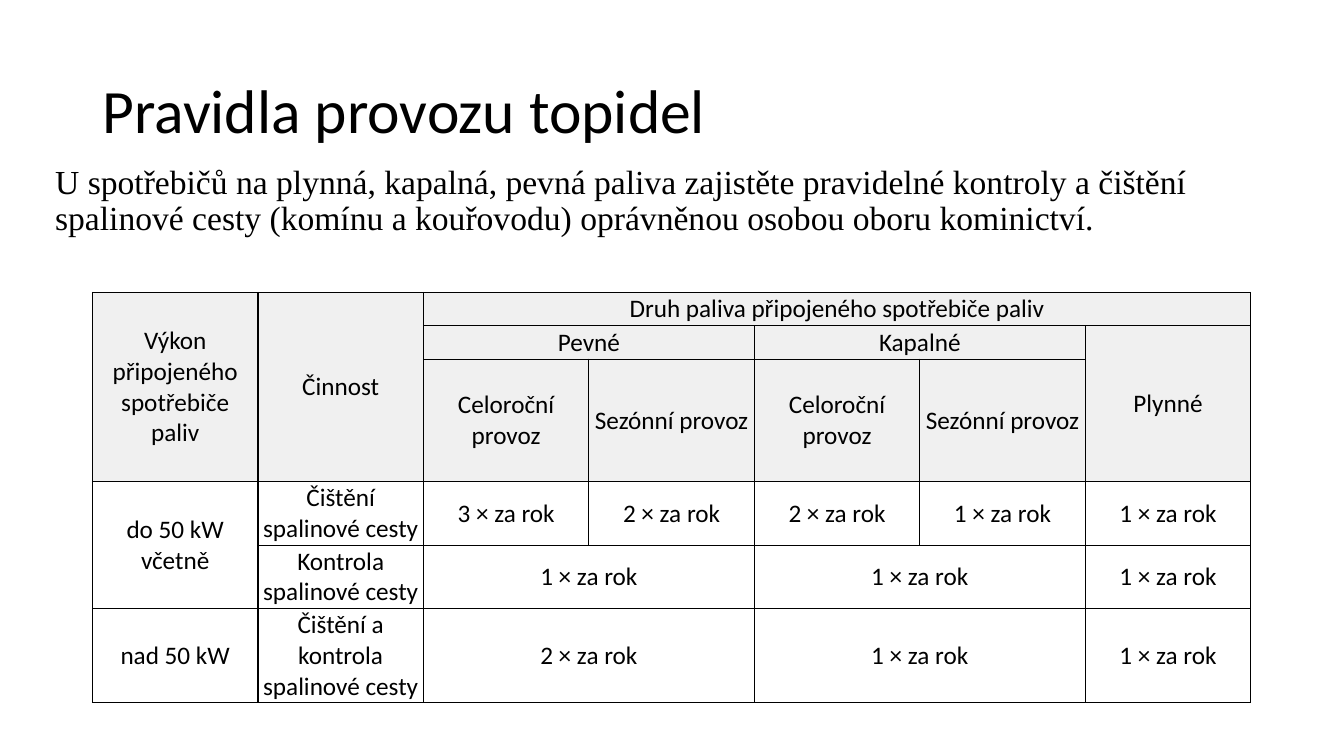
from lxml import etree
from pptx import Presentation
from pptx.dml.color import RGBColor
from pptx.enum import text
from pptx.oxml import ns
from pptx.util import Cm, Pt

TITLE = "Pravidla provozu topidel"
INTRO = ("U spotřebičů na plynná, kapalná, pevná paliva zajistěte pravidelné kontroly a čištění "
         "spalinové cesty (komínu a kouřovodu) oprávněnou osobou oboru kominictví.")
LEFT, UP = "<", "^"
ROWS = [
    ("Výkon připojeného spotřebiče paliv", "Činnost",
     "Druh paliva připojeného spotřebiče paliv", LEFT, LEFT, LEFT, LEFT),
    (UP, UP, "Pevné", LEFT, "Kapalné", LEFT, "Plynné"),
    (UP, UP, "Celoroční provoz", "Sezónní provoz", "Celoroční provoz", "Sezónní provoz", UP),
    ("do 50 kW včetně", "Čištění spalinové cesty",
     "3 × za rok", "2 × za rok", "2 × za rok", "1 × za rok", "1 × za rok"),
    (UP, "Kontrola spalinové cesty", "1 × za rok", LEFT, "1 × za rok", LEFT, "1 × za rok"),
    ("nad 50 kW", "Čištění a kontrola spalinové cesty",
     "2 × za rok", LEFT, "1 × za rok", LEFT, "1 × za rok"),
]
ROW_HEIGHTS = [0.84, 0.84, 1.6, 1.6, 1.6, 2.36]
COLUMN_WIDTH = 4.17
HEADER_ROWS = 3
BLACK, WHITE, GREY = "000000", "FFFFFF", "F0F0F0"
TITLE_FONT = {"name": "Calibri", "size": Pt(44)}
INTRO_FONT = {"name": "Times New Roman", "size": Pt(24)}
CELL_FONT = {"name": "Calibri", "size": Pt(18)}
CELL_FORMAT = {"margin_left": Cm(0.05), "margin_right": Cm(0.05),
               "margin_top": Cm(0.02), "margin_bottom": Cm(0.02),
               "vertical_anchor": text.MSO_ANCHOR.MIDDLE}


def color(value):
    return RGBColor.from_string(value)


def apply(target, values):
    for name, value in values.items():
        setattr(target, name, value)


def write(frame, words, font, **layout):
    para = frame.paragraphs[0]
    apply(para, layout)
    span = para.add_run()
    span.text = words
    apply(span.font, font)
    span.font.color.rgb = color(BLACK)


def place(box, left, top, width, height):
    apply(box, {"left": Cm(left), "top": Cm(top), "width": Cm(width), "height": Cm(height)})


def add_borders(cell):
    properties = cell._tc.get_or_add_tcPr()
    for side in ("a:lnL", "a:lnR", "a:lnT", "a:lnB"):
        line = etree.SubElement(properties, ns.qn(side), w=str(Pt(1)))
        fill = etree.SubElement(line, ns.qn("a:solidFill"))
        etree.SubElement(fill, ns.qn("a:srgbClr"), val=BLACK)


def last_of(cells, start, marker):
    end = start
    while end + 1 < len(cells) and cells[end + 1] == marker:
        end += 1
    return end


def add_title(page):
    title = page.shapes.title
    place(title, 2.33, 1.02, 29.21, 3.68)
    apply(title.text_frame, {"word_wrap": True, "auto_size": text.MSO_AUTO_SIZE.NONE,
                             "vertical_anchor": text.MSO_ANCHOR.MIDDLE})
    write(title.text_frame, TITLE, TITLE_FONT, alignment=text.PP_ALIGN.LEFT, line_spacing=0.9)


def add_intro(page):
    box = page.shapes.add_textbox(Cm(1.14), Cm(4.04), Cm(30.38), Cm(13.11))
    box.text_frame.word_wrap = True
    write(box.text_frame, INTRO, INTRO_FONT, line_spacing=0.9)


def add_rules(page):
    columns = len(ROWS[0])
    table = page.shapes.add_table(len(ROWS), columns, Cm(2.33), Cm(7.37),
                                  Cm(COLUMN_WIDTH * columns), Cm(sum(ROW_HEIGHTS))).table
    apply(table, {"first_row": False, "horz_banding": False})
    for column in table.columns:
        column.width = Cm(COLUMN_WIDTH)
    for row, height in zip(table.rows, ROW_HEIGHTS):
        row.height = Cm(height)
    for r, words_in_row in enumerate(ROWS):
        for c, words in enumerate(words_in_row):
            cell = table.cell(r, c)
            add_borders(cell)
            cell.fill.solid()
            cell.fill.fore_color.rgb = color(GREY if r < HEADER_ROWS else WHITE)
            apply(cell, CELL_FORMAT)
            if words in (LEFT, UP):
                continue
            write(cell.text_frame, words, CELL_FONT, alignment=text.PP_ALIGN.CENTER)
            bottom = last_of([row[c] for row in ROWS], r, UP)
            right = last_of(words_in_row, c, LEFT)
            if (bottom, right) != (r, c):
                cell.merge(table.cell(bottom, right))


def main():
    deck = Presentation()
    apply(deck, {"slide_width": Cm(33.87), "slide_height": Cm(19.05)})
    page = deck.slides.add_slide(deck.slide_layouts[5])
    add_title(page)
    add_intro(page)
    add_rules(page)
    deck.save("out.pptx")


if __name__ == "__main__":
    main()
